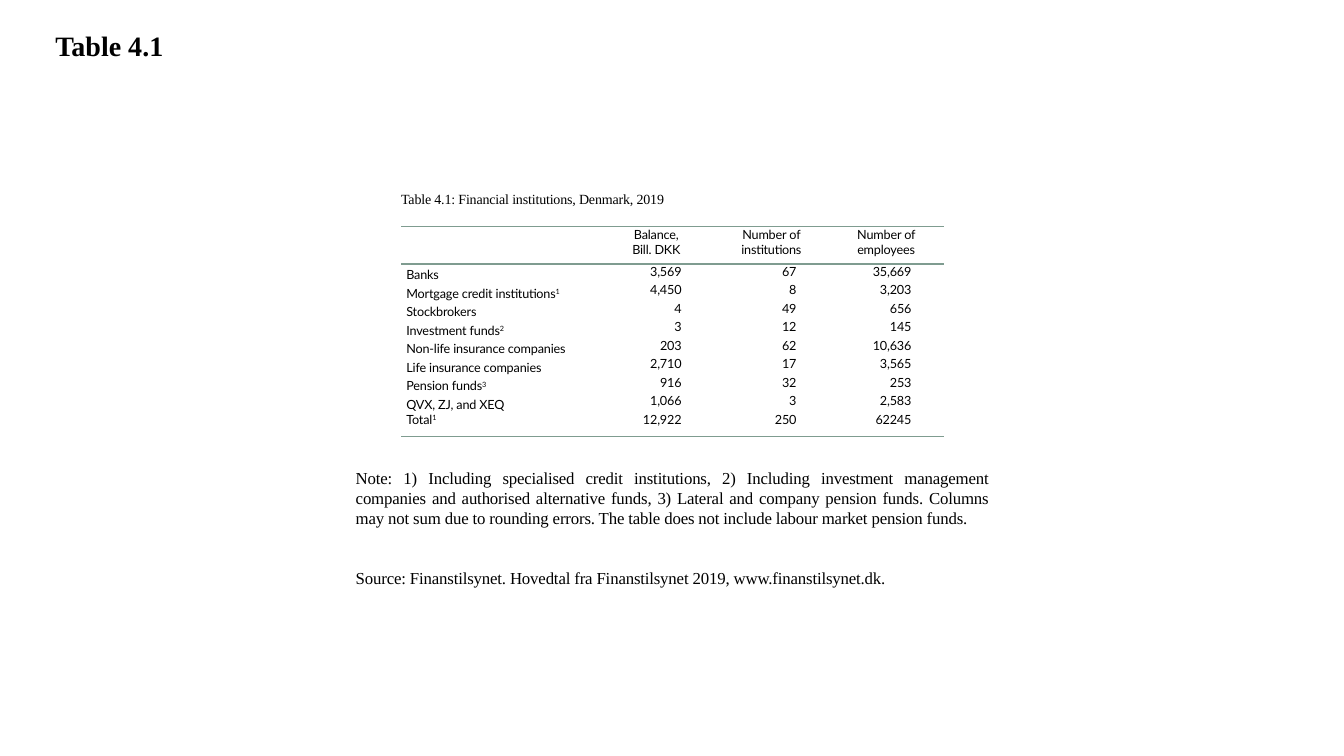
from copy import deepcopy
from lxml.etree import SubElement
from pptx import Presentation
from pptx.dml.color import RGBColor
from pptx.enum.text import MSO_ANCHOR, MSO_AUTO_SIZE, PP_ALIGN
from pptx.oxml import parse_xml
from pptx.oxml.ns import nsdecls, qn
from pptx.util import Inches, Pt

COLORS = {"text": "000000", "rule": "7F9C90"}
SERIF, SANS = "Times New Roman", "Lato"
TITLE = "Table 4.1"
CAPTION = "Table 4.1: Financial institutions, Denmark, 2019"
NOTE = ("Note: 1) Including specialised credit institutions, 2) Including "
        "investment management companies and authorised alternative funds, "
        "3) Lateral and company pension funds. Columns may not sum due to "
        "rounding errors. The table does not include labour market pension funds.")
SOURCE = "Source: Finanstilsynet. Hovedtal fra Finanstilsynet 2019, www.finanstilsynet.dk."
ROWS = [
    ("", "Balance,\nBill. DKK", "Number of institutions", "Number of employees"),
    ("Banks", "3,569", "67", "35,669"),
    ("Mortgage credit institutions^1", "4,450", "8", "3,203"),
    ("Stockbrokers", "4", "49", "656"),
    ("Investment funds^2", "3", "12", "145"),
    ("Non-life insurance companies", "203", "62", "10,636"),
    ("Life insurance companies", "2,710", "17", "3,565"),
    ("Pension funds^3", "916", "32", "253"),
    ("QVX, ZJ, and XEQ", "1,066", "3", "2,583"),
    ("Total^1", "12,922", "250", "62245"),
]
NO_STYLE = "{2D5ABB26-0587-4C30-8999-92F81FD0307C}"
HEAD, BODY, TOTAL = 0.37, 1.47, 0.24
FIRST, OTHER = 1.96, 1.14


def write(par, text, size, face, align, bold=False, spc=-10):
    """Fill a paragraph, raising whatever follows a caret."""
    base, _, mark = text.partition("^")
    par.text = base
    par.alignment = align
    if mark:
        par.add_run().text = mark
    for run in par.runs:
        font = run.font
        font.size, font.name, font.bold = Pt(size), face, bold
        font.color.rgb = RGBColor.from_string(COLORS["text"])
        run._r.get_or_add_rPr().set("spc", str(spc))
    if mark:
        par.runs[-1]._r.get_or_add_rPr().set("baseline", "30000")
    for gap in par._p.findall(qn("a:br")):
        gap.append(deepcopy(par.runs[0]._r.rPr))


def add_box(slide, left, top, width, height, grow=True):
    """Add a wrapping text box and return its frame."""
    box = slide.shapes.add_textbox(*map(Inches, (left, top, width, height)))
    frame = box.text_frame
    frame.word_wrap = True
    if grow:
        frame.auto_size = MSO_AUTO_SIZE.SHAPE_TO_FIT_TEXT
    return frame


def add_rules(cell, sides):
    """Draw one-point rules on the given sides and clear the other."""
    props = cell._tc.get_or_add_tcPr()
    for spot, side in enumerate("TB"):
        line = parse_xml(f'<a:ln{side} {nsdecls("a")} w="12700"/>')
        if side in sides:
            fill = SubElement(line, qn("a:solidFill"))
            SubElement(fill, qn("a:srgbClr")).set("val", COLORS["rule"])
        else:
            SubElement(line, qn("a:noFill"))
        props.insert(spot, line)


def add_grid(slide):
    """Build the table of institutions."""
    last = len(ROWS) - 1
    step = BODY / (last - 1)
    frame = slide.shapes.add_table(
        len(ROWS), len(ROWS[0]), Inches(3.98), Inches(2.25),
        Inches(FIRST + 3 * OTHER), Inches(HEAD + BODY + TOTAL))
    table = frame.table
    table.first_row = table.horz_banding = False
    table._tbl.tblPr.find(qn("a:tableStyleId")).text = NO_STYLE
    for c, col in enumerate(table.columns):
        col.width = Inches(OTHER if c else FIRST)
    sides = {0: "TB", 1: "T", last: "B"}
    for r, row in enumerate(ROWS):
        table.rows[r].height = Inches({0: HEAD, last: TOTAL}.get(r, step))
        for c, text in enumerate(row):
            cell = table.cell(r, c)
            cell.fill.background()
            cell.margin_top = cell.margin_bottom = 0
            cell.margin_left = Inches(0.05)
            cell.margin_right = Inches(0.32 if r and c else 0.05)
            low = c == 0 and 0 < r < last
            cell.vertical_anchor = MSO_ANCHOR.BOTTOM if low else MSO_ANCHOR.TOP
            side = PP_ALIGN.LEFT
            if c:
                side = PP_ALIGN.RIGHT if r else PP_ALIGN.CENTER
            write(cell.text_frame.paragraphs[0], text, 9, SANS, side)
            add_rules(cell, sides.get(r, ""))


def main():
    """Build and save the slide."""
    deck = Presentation()
    deck.slide_width, deck.slide_height = Inches(13.33), Inches(7.5)
    slide = deck.slides.add_slide(deck.slide_layouts[6])

    title = add_box(slide, 0.45, 0.27, 1.98, 0.97, grow=False).paragraphs[0]
    write(title, TITLE, 20, SERIF, PP_ALIGN.LEFT, bold=True, spc=0)
    title.line_spacing = 0.9

    add_grid(slide)

    notes = add_box(slide, 3.43, 4.59, 6.48, 1.31)
    note, source = notes.paragraphs[0], notes.add_paragraph()
    for par, text, before, after in ((note, NOTE, 4, 4), (source, SOURCE, 24, 14.5)):
        write(par, text, 12, SERIF, PP_ALIGN.JUSTIFY)
        par.space_before, par.space_after = Pt(before), Pt(after)

    label = add_box(slide, 3.88, 1.86, 6.67, 0.26).paragraphs[0]
    write(label, CAPTION, 10, SERIF, PP_ALIGN.JUSTIFY)
    label.line_spacing, label.space_after = Pt(11), Pt(6)

    deck.save("out.pptx")


if __name__ == "__main__":
    main()
